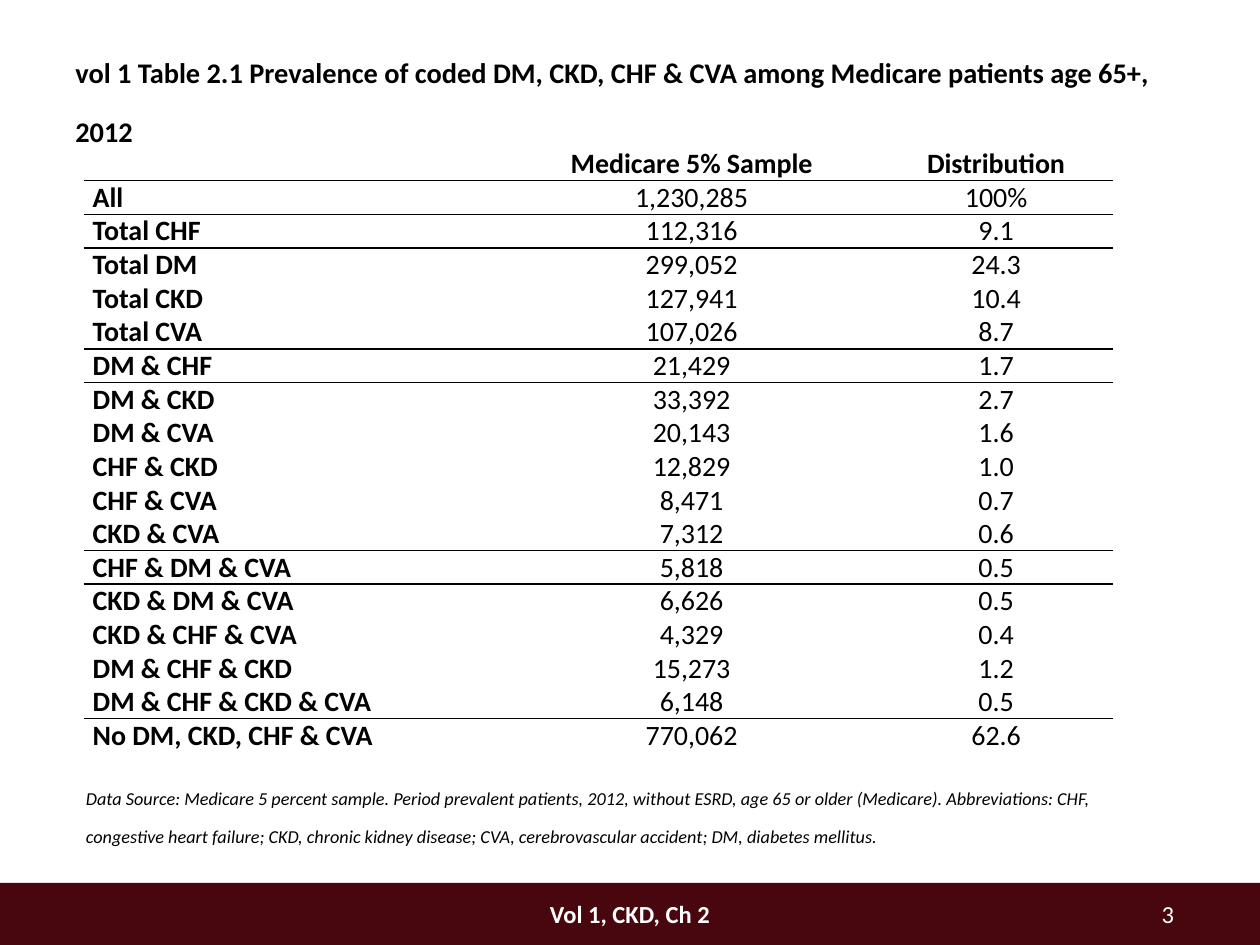
from typing import NamedTuple

from lxml.etree import SubElement
from pptx import Presentation
from pptx.dml.color import RGBColor
from pptx.enum.shapes import MSO_SHAPE
from pptx.enum.text import MSO_ANCHOR, MSO_AUTO_SIZE, PP_ALIGN
from pptx.oxml.ns import qn
from pptx.util import Pt

BLACK = RGBColor(0x00, 0x00, 0x00)
WHITE = RGBColor(0xFF, 0xFF, 0xFF)
MAROON = RGBColor(0x48, 0x07, 0x0E)

FONT = "Calibri"
PLAIN_TABLE_STYLE = "{2D5ABB26-0587-4C30-8999-92F81FD0307C}"
COLUMN_WIDTHS = (240, 214.5, 133.5)
ROW_HEIGHT = 19.2
RULE_WIDTH = 1


class Box(NamedTuple):
    left: float
    top: float
    width: float
    height: float

    def lengths(self):
        return [Pt(length) for length in self]


class Row(NamedTuple):
    label: str
    patients: str
    share: str


HEADER = Row("", "Medicare 5% Sample", "Distribution")

# A rule separates each group from the next.
GROUPS = [
    [HEADER],
    [Row("All", "1,230,285", "100%")],
    [
        Row("Total CHF", "112,316", "9.1"),
        Row("Total DM", "299,052", "24.3"),
        Row("Total CKD", "127,941", "10.4"),
        Row("Total CVA", "107,026", "8.7"),
    ],
    [
        Row("DM & CHF", "21,429", "1.7"),
        Row("DM & CKD", "33,392", "2.7"),
        Row("DM & CVA", "20,143", "1.6"),
        Row("CHF & CKD", "12,829", "1.0"),
        Row("CHF & CVA", "8,471", "0.7"),
        Row("CKD & CVA", "7,312", "0.6"),
    ],
    [
        Row("CHF & DM & CVA", "5,818", "0.5"),
        Row("CKD & DM & CVA", "6,626", "0.5"),
        Row("CKD & CHF & CVA", "4,329", "0.4"),
        Row("DM & CHF & CKD", "15,273", "1.2"),
        Row("DM & CHF & CKD & CVA", "6,148", "0.5"),
    ],
    [Row("No DM, CKD, CHF & CVA", "770,062", "62.6")],
]


def write(frame, text: str, *, size: float, color: RGBColor = BLACK,
          bold: bool = False, italic: bool = False, raised: int = 0,
          align: PP_ALIGN = PP_ALIGN.LEFT) -> None:
    """Put text in a frame; raised is the superscript offset in percent."""
    paragraph = frame.paragraphs[0]
    paragraph.alignment = align
    if not text:
        SubElement(paragraph._p, qn("a:endParaRPr"), sz=str(size * 100))
        return
    run = paragraph.add_run()
    run.text = text
    font = run.font
    font.name, font.size = FONT, Pt(size)
    font.bold, font.italic = bold, italic
    font.color.rgb = color
    if raised:
        run._r.get_or_add_rPr().set("baseline", str(raised * 1000))


def add_text(slide, box: Box, text: str, *, grow: bool = False, **style) -> None:
    frame = slide.shapes.add_textbox(*box.lengths()).text_frame
    frame.word_wrap = True
    if grow:
        frame.auto_size = MSO_AUTO_SIZE.SHAPE_TO_FIT_TEXT
    write(frame, text, **style)


def add_rule(cell, edge: str) -> None:
    """Draw a border on the top (lnT) or bottom (lnB) edge of a cell."""
    line = SubElement(cell._tc.get_or_add_tcPr(), qn(f"a:{edge}"),
                      w=str(Pt(RULE_WIDTH)))
    fill = SubElement(line, qn("a:solidFill"))
    SubElement(fill, qn("a:srgbClr"), val=str(BLACK))


def add_prevalence_table(slide, left: float, top: float) -> None:
    rows = [row for group in GROUPS for row in group]
    box = Box(left, top, sum(COLUMN_WIDTHS), ROW_HEIGHT * len(rows))
    table = slide.shapes.add_table(
        len(rows), len(COLUMN_WIDTHS), *box.lengths()).table
    table.first_row = table.horz_banding = False
    table._tbl.tblPr.find(qn("a:tableStyleId")).text = PLAIN_TABLE_STYLE
    for column, width in zip(table.columns, COLUMN_WIDTHS):
        column.width = Pt(width)
    for table_row in table.rows:
        table_row.height = Pt(ROW_HEIGHT)

    group_starts = {sum(map(len, GROUPS[:i])) for i in range(1, len(GROUPS))}
    for row_index, row in enumerate(rows):
        for column_index, text in enumerate(row):
            cell = table.cell(row_index, column_index)
            is_label = column_index == 0
            cell.vertical_anchor = MSO_ANCHOR.MIDDLE
            cell.margin_left = cell.margin_right = Pt(5)
            cell.margin_top = cell.margin_bottom = 0
            write(cell.text_frame, text, size=16,
                  bold=is_label or row is HEADER,
                  align=PP_ALIGN.LEFT if is_label else PP_ALIGN.CENTER)
            if row_index in group_starts:
                add_rule(cell, "lnT")
            if row_index + 1 in group_starts:
                add_rule(cell, "lnB")
            cell.fill.background()


def add_footer(slide) -> None:
    band = slide.shapes.add_shape(
        MSO_SHAPE.RECTANGLE, *Box(0, 504.5, 720, 35.5).lengths())
    band.shadow.inherit = False
    band.fill.solid()
    band.fill.fore_color.rgb = MAROON
    band.line.fill.background()
    add_text(slide, Box(282, 510, 156, 24), "Vol 1, CKD, Ch 2",
             size=14, color=WHITE, bold=True, align=PP_ALIGN.CENTER)
    add_text(slide, Box(606, 510, 72, 22), "3",
             size=14, color=WHITE, align=PP_ALIGN.RIGHT)


def main() -> None:
    deck = Presentation()
    deck.slide_width, deck.slide_height = Pt(720), Pt(540)
    slide = deck.slides.add_slide(deck.slide_layouts[6])

    add_footer(slide)
    add_text(
        slide, Box(42, 444, 624, 51),
        "Data Source: Medicare 5 percent sample. Period prevalent patients, "
        "2012, without ESRD, age 65 or older (Medicare). Abbreviations: CHF, "
        "congestive heart failure; CKD, chronic kidney disease; CVA, "
        "cerebrovascular accident; DM, diabetes mellitus.",
        grow=True, size=18, italic=True, raised=30)
    add_text(
        slide, Box(36, 24.5, 648, 52.5),
        "vol 1 Table 2.1 Prevalence of coded DM, CKD, CHF & CVA among "
        "Medicare patients age 65+, 2012",
        grow=True, size=28, bold=True, raised=30)
    add_prevalence_table(slide, 48, 84)

    deck.save("out.pptx")


if __name__ == "__main__":
    main()
